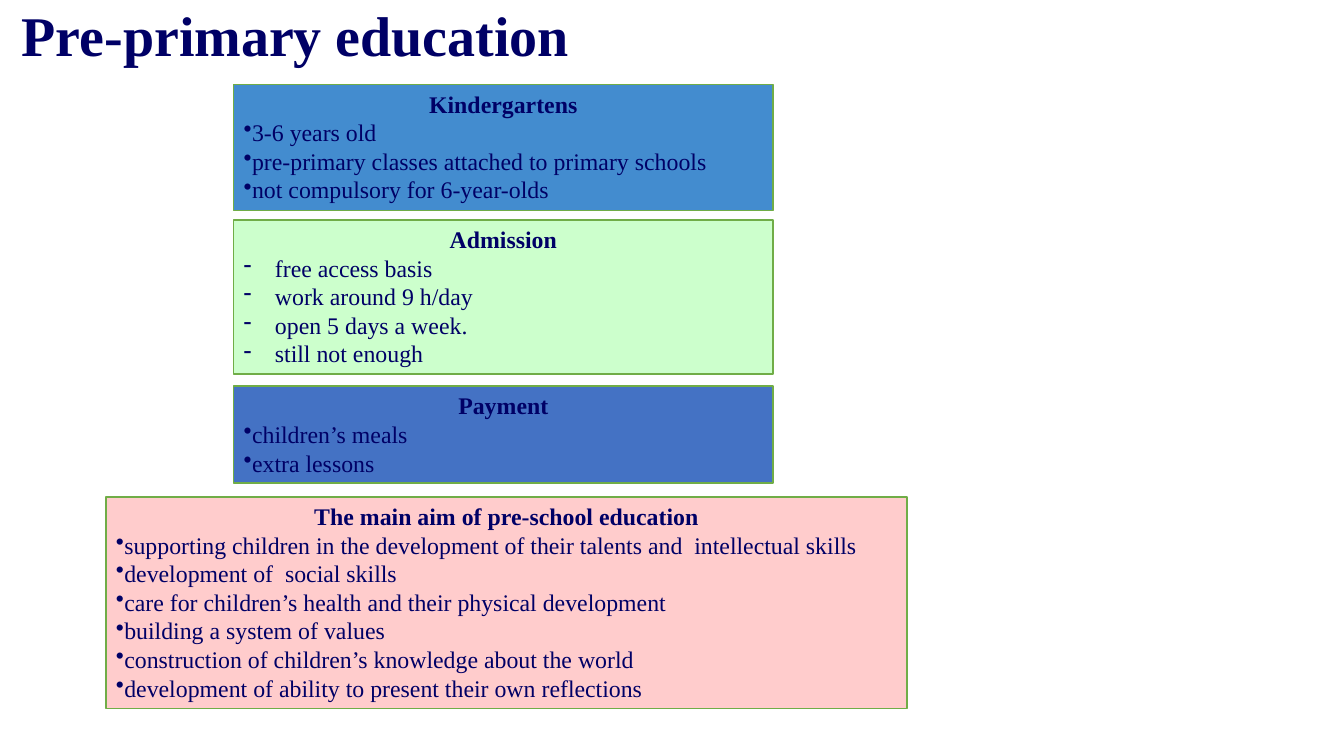
from dataclasses import dataclass

import lxml.etree
import pptx
import pptx.dml.color
import pptx.enum.shapes
import pptx.enum.text
import pptx.oxml.ns
import pptx.presentation
import pptx.slide
import pptx.text.text
import pptx.util
from pptx.dml.color import RGBColor
from pptx.util import Cm

NAVY = RGBColor(0x00, 0x00, 0x66)
GREEN = RGBColor(0x70, 0xAD, 0x47)
SKY = RGBColor(0x43, 0x8C, 0xCF)
MINT = RGBColor(0xCC, 0xFF, 0xCC)
BLUE = RGBColor(0x44, 0x72, 0xC4)
PINK = RGBColor(0xFF, 0xCC, 0xCC)
FONT = "Times New Roman"


@dataclass(frozen=True)
class Panel:
    heading: str
    items: tuple[str, ...]
    top: float
    height: float
    fill: RGBColor
    left: float = 5.89
    width: float = 13.59
    bullet: str = "•"
    indent: float = 0
    align: pptx.enum.text.PP_ALIGN = pptx.enum.text.PP_ALIGN.LEFT


PANELS = (
    Panel(
        "Kindergartens",
        (
            "3-6 years old",
            "pre-primary classes attached to primary schools",
            "not compulsory for 6-year-olds",
        ),
        2.13, 3.18, SKY,
    ),
    Panel(
        "Admission",
        (
            "free access basis",
            "work around 9 h/day",
            "open 5 days a week.",
            "still not enough",
        ),
        5.54, 3.89, MINT,
        bullet="-", indent=0.79, align=pptx.enum.text.PP_ALIGN.JUSTIFY,
    ),
    Panel(
        "Payment",
        ("children’s meals", "extra lessons"),
        9.73, 2.44, BLUE,
    ),
    Panel(
        "The main aim of pre-school education",
        (
            "supporting children in the development of their talents and  intellectual skills",
            "development of  social skills",
            "care for children’s health and their physical development",
            "building a system of values",
            "construction of children’s knowledge about the world",
            "development of ability to present their own reflections",
        ),
        12.52, 5.33, PINK, left=2.67, width=20.19,
    ),
)


def write(p: pptx.text.text._Paragraph, text: str, size: float, bold: bool) -> None:
    p.text = text
    for r in p.runs:
        r.font.name = FONT
        r.font.size = pptx.util.Pt(size)
        r.font.bold = bold
        r.font.color.rgb = NAVY


def add_bullet(p: pptx.text.text._Paragraph, char: str, indent: float) -> None:
    pPr = p._p.get_or_add_pPr()
    pPr.set("marL", str(Cm(indent)))
    pPr.set("indent", str(-Cm(indent)))
    bullet = lxml.etree.SubElement(pPr, pptx.oxml.ns.qn("a:buChar"))
    bullet.set("char", char)


def draw_panel(s: pptx.slide.Slide, panel: Panel) -> None:
    sp = s.shapes.add_shape(
        pptx.enum.shapes.MSO_SHAPE.RECTANGLE,
        Cm(panel.left), Cm(panel.top), Cm(panel.width), Cm(panel.height),
    )
    sp.shadow.inherit = False
    sp.fill.solid()
    sp.fill.fore_color.rgb = panel.fill
    sp.line.color.rgb = GREEN
    sp.line.width = pptx.util.Pt(1)
    tf = sp.text_frame
    tf.word_wrap = True
    tf.auto_size = pptx.enum.text.MSO_AUTO_SIZE.SHAPE_TO_FIT_TEXT
    tf.vertical_anchor = pptx.enum.text.MSO_ANCHOR.TOP
    p = tf.paragraphs[0]
    p.alignment = pptx.enum.text.PP_ALIGN.CENTER
    write(p, panel.heading, 17, True)
    for item in panel.items:
        p = tf.add_paragraph()
        p.alignment = panel.align
        add_bullet(p, panel.bullet, panel.indent)
        write(p, item, 17, False)


def draw_title(s: pptx.slide.Slide, text: str) -> None:
    tf = s.shapes.add_textbox(Cm(0.3), Cm(0), Cm(24.8), Cm(1.93)).text_frame
    tf.word_wrap = True
    tf.vertical_anchor = pptx.enum.text.MSO_ANCHOR.MIDDLE
    p = tf.paragraphs[0]
    p.line_spacing = 0.9
    write(p, text, 40, True)


def main() -> None:
    prs = pptx.Presentation()
    prs.slide_width = Cm(33.87)
    prs.slide_height = Cm(19.05)
    s = prs.slides.add_slide(prs.slide_layouts[6])
    draw_title(s, "Pre-primary education")
    for panel in PANELS:
        draw_panel(s, panel)
    prs.save("out.pptx")


if __name__ == "__main__":
    main()
